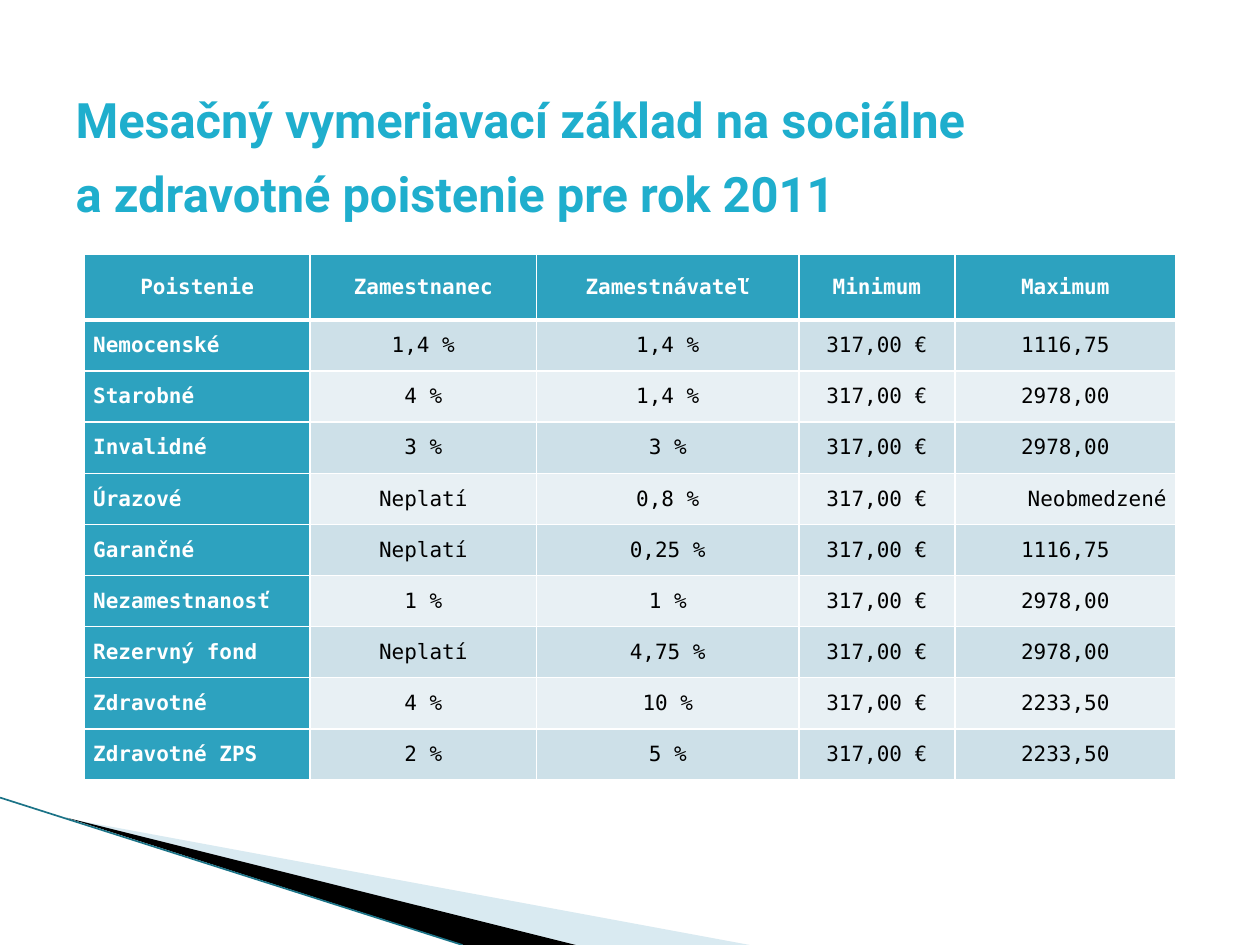
from lxml import etree
from pptx import Presentation
from pptx.dml.color import RGBColor
from pptx.enum.shapes import MSO_CONNECTOR
from pptx.enum.text import MSO_ANCHOR as Anchor, MSO_AUTO_SIZE, PP_ALIGN as Align
from pptx.oxml import parse_xml
from pptx.oxml.ns import nsdecls, qn
from pptx.util import Inches, Pt

COLORS = {
    "title": "1FAECD", "header": "2DA2BF", "odd": "CDE0E8", "even": "E8F0F4",
    "white": "FFFFFF", "black": "000000", "wedge": "A0CBDC", "edge": "1B7387",
}


def write(frame, text, *, size, font, color, bold=False, align=Align.LEFT, spacing=None):
    paragraph = frame.paragraphs[0]
    paragraph.alignment = align
    if spacing:
        paragraph.line_spacing = spacing
    run = paragraph.add_run()
    run.text = text
    run.font.size, run.font.name, run.font.bold = Pt(size), font, bold
    run.font.color.rgb = RGBColor.from_string(COLORS[color])


def add_borders(cell, widths):
    """Draw white borders; widths maps L, R, T and B to points."""
    for side, width in widths.items():
        cell._tc.get_or_add_tcPr().append(parse_xml(
            f'<a:ln{side} {nsdecls("a")} w="{Pt(width)}"><a:solidFill>'
            f'<a:srgbClr val="{COLORS["white"]}"/></a:solidFill></a:ln{side}>'))


deck = Presentation()
deck.slide_width, deck.slide_height = Inches(10), Inches(7.5)
W, H = deck.slide_width, deck.slide_height
slide = deck.slides.add_slide(deck.slide_layouts[5])

# Corner decoration, in thousandths of the slide's width
wedges = [
    ("wedge", 40, [(55, 650), (595, 750), (456, 750)]),
    ("black", 100, [(53, 649), (457, 750), (368, 750)]),
]
for color, opacity, (tip, *base) in wedges:
    outline = slide.shapes.build_freeform(*tip, scale=W / 1000)
    outline.add_line_segments(base, close=True)
    wedge = outline.convert_to_shape()
    wedge.shadow.inherit = False
    wedge.fill.solid()
    wedge.fill.fore_color.rgb = RGBColor.from_string(COLORS[color])
    wedge.line.fill.background()
    if opacity < 100:
        tint = wedge._element.spPr.find(qn("a:solidFill"))[0]
        etree.SubElement(tint, qn("a:alpha")).set("val", str(opacity * 1000))

edge = slide.shapes.add_connector(
    MSO_CONNECTOR.STRAIGHT, 0, int(H * 0.844), int(W * 0.367), H)
edge.line.color.rgb = RGBColor.from_string(COLORS["edge"])
edge.line.width = Pt(0.95)
etree.SubElement(edge._element.spPr, qn("a:effectLst"))

# Title
title = slide.shapes.title
title.left, title.top = int(W * 0.05), int(H * 0.04)
title.width, title.height = int(W * 0.9), int(H / 6)
heading = title.text_frame
heading.word_wrap = True
heading.auto_size = MSO_AUTO_SIZE.NONE
heading.vertical_anchor = Anchor.TOP
heading.margin_top = Inches(0.29)
write(heading, "Mesačný vymeriavací základ na sociálne a\u00a0zdravotné poistenie pre rok 2011",
      size=27.9, font="Roboto", color="title", bold=True, spacing=Pt(42.3))

# Insurance table
MINIMUM = "317,00 €"
insurance = [
    ("Poistenie", "Zamestnanec", "Zamestnávateľ", "Minimum", "Maximum"),
    ("Nemocenské", "1,4 %", "1,4 %", MINIMUM, "1116,75"),
    ("Starobné", "4 %", "1,4 %", MINIMUM, "2978,00"),
    ("Invalidné", "3 %", "3 %", MINIMUM, "2978,00"),
    ("Úrazové", "Neplatí", "0,8 %", MINIMUM, "Neobmedzené"),
    ("Garančné", "Neplatí", "0,25 %", MINIMUM, "1116,75"),
    ("Nezamestnanosť", "1 %", "1 %", MINIMUM, "2978,00"),
    ("Rezervný fond", "Neplatí", "4,75 %", MINIMUM, "2978,00"),
    ("Zdravotné", "4 %", "10 %", MINIMUM, "2233,50"),
    ("Zdravotné ZPS", "2 %", "5 %", MINIMUM, "2233,50"),
]
column_widths = [Inches(w) for w in (1.79, 1.8, 2.08, 1.24, 1.75)]
header_height, table_height = Inches(0.52), Inches(4.17)
row_height = (table_height - header_height) // (len(insurance) - 1)

rates = slide.shapes.add_table(
    len(insurance), len(column_widths), Inches(0.67), Inches(2.02),
    sum(column_widths), table_height).table
for column, width in zip(rates.columns, column_widths):
    column.width = width

for r, entries in enumerate(insurance):
    rates.rows[r].height = row_height if r else header_height
    for c, entry in enumerate(entries):
        cell = rates.cell(r, c)
        is_heading = r == 0 or c == 0
        add_borders(cell, {"L": 1, "R": 1, "T": 3 if r == 1 else 1, "B": 1 if r else 3})
        cell.fill.solid()
        fill = "header" if is_heading else "odd" if r % 2 else "even"
        cell.fill.fore_color.rgb = RGBColor.from_string(COLORS[fill])
        cell.vertical_anchor = Anchor.MIDDLE
        cell.margin_left = cell.margin_right = Inches(0.07)
        cell.margin_top = cell.margin_bottom = 0
        if entry == "Neobmedzené":
            align = Align.RIGHT
        else:
            align = Align.LEFT if r and c == 0 else Align.CENTER
        write(cell.text_frame, entry, size=12, font="DejaVu Sans Mono", align=align,
              color="white" if is_heading else "black", bold=is_heading)

deck.save("out.pptx")
